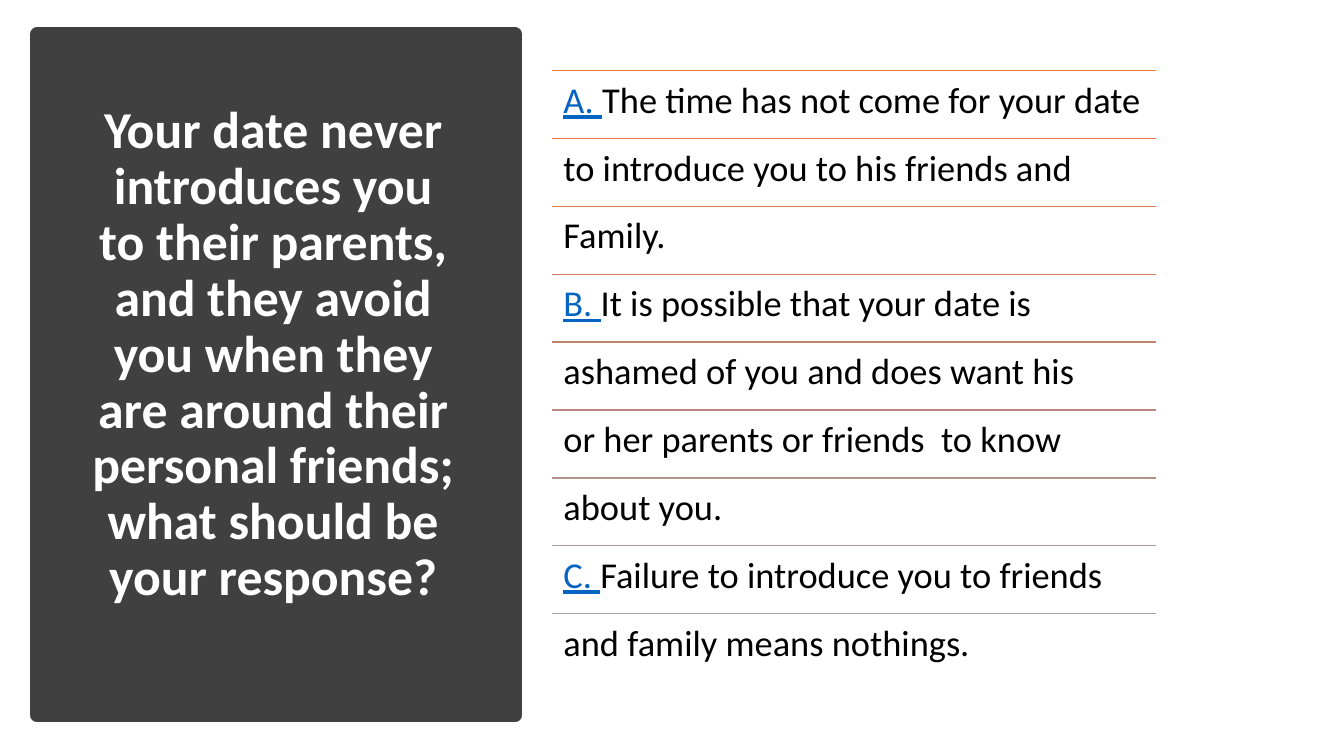
from lxml.etree import SubElement
from pptx import Presentation
from pptx.dml.color import RGBColor
from pptx.enum.shapes import MSO_CONNECTOR as Connector, MSO_SHAPE as Shape
from pptx.enum.text import MSO_ANCHOR as Anchor, PP_ALIGN as Align
from pptx.oxml.ns import qn
from pptx.util import Cm, Pt

WHITE = RGBColor(0xFF, 0xFF, 0xFF)
BLACK = RGBColor(0x00, 0x00, 0x00)
CHARCOAL = RGBColor(0x40, 0x40, 0x40)
LETTER_BLUE = RGBColor(0x05, 0x63, 0xC1)

QUESTION = (
    "Your date never introduces you to their parents, and they avoid you "
    "when they are around their personal friends; what should be your response?"
)
ANSWER_ROWS = [
    ("A. ", "The time has not come for your date", RGBColor(0xED, 0x7D, 0x31)),
    ("", "to introduce you to his friends and", RGBColor(0xE2, 0x7A, 0x42)),
    ("", "Family.", RGBColor(0xD8, 0x7A, 0x51)),
    ("B. ", "It is possible that your date is", RGBColor(0xCE, 0x7C, 0x61)),
    ("", "ashamed of you and does want his", RGBColor(0xC4, 0x81, 0x70)),
    ("", "or her parents or friends  to know", RGBColor(0xBC, 0x87, 0x7E)),
    ("", "about you.", RGBColor(0xB4, 0x90, 0x8B)),
    ("C. ", "Failure to introduce you to friends", RGBColor(0xAC, 0x9A, 0x99)),
    ("", "and family means nothings.", RGBColor(0xA5, 0xA5, 0xA5)),
]
ANSWERS_LEFT, ANSWERS_TOP = 13.92, 1.78
ANSWERS_WIDTH, ROW_HEIGHT = 15.21, 1.71


class QuizSlide:
    font_name = "Calibri"
    line_spacing = 0.9

    def __init__(self, slide):
        self.shapes = slide.shapes

    def panel(self, left, top, width, height, color):
        panel = self.shapes.add_shape(
            Shape.RECTANGLE, Cm(left), Cm(top), Cm(width), Cm(height)
        )
        panel.shadow.inherit = False
        panel.fill.solid()
        panel.fill.fore_color.rgb = color
        panel.line.color.rgb = color
        panel.line.width = Pt(10)

    def rule(self, left, top, width, color):
        rule = self.shapes.add_connector(
            Connector.STRAIGHT, Cm(left), Cm(top), Cm(left + width), Cm(top)
        )
        rule.line.color.rgb = color
        rule.line.width = Pt(1)
        SubElement(rule.element.spPr, qn("a:effectLst"))

    def text(self, left, top, width, height, parts, size, bold=False,
             align=Align.LEFT, anchor=Anchor.TOP, inset=None):
        box = self.shapes.add_textbox(Cm(left), Cm(top), Cm(width), Cm(height))
        frame = box.text_frame
        frame.word_wrap = True
        frame.vertical_anchor = anchor
        if inset is not None:
            frame.margin_left = frame.margin_right = Cm(inset)
            frame.margin_top = frame.margin_bottom = Cm(inset)
        paragraph = frame.paragraphs[0]
        paragraph.alignment = align
        paragraph.line_spacing = self.line_spacing
        for wording, color, underline in parts:
            run = paragraph.add_run()
            run.text = wording
            run.font.name = self.font_name
            run.font.size = Pt(size)
            run.font.bold = bold
            run.font.underline = underline
            run.font.color.rgb = color

    def answer_row(self, top, letter, wording, rule_color):
        self.rule(ANSWERS_LEFT, top, ANSWERS_WIDTH, rule_color)
        parts = [(letter, LETTER_BLUE, True)] if letter else []
        parts.append((wording, BLACK, False))
        self.text(ANSWERS_LEFT, top, ANSWERS_WIDTH, ROW_HEIGHT, parts,
                  size=26, inset=0.28)


def main():
    presentation = Presentation()
    presentation.slide_width = Cm(33.87)
    presentation.slide_height = Cm(19.05)
    quiz = QuizSlide(presentation.slides.add_slide(presentation.slide_layouts[6]))

    quiz.panel(0.94, 0.86, 12.04, 17.17, CHARCOAL)
    quiz.text(2.06, 2.06, 9.65, 13.79, [(QUESTION, WHITE, False)], size=37,
              bold=True, align=Align.CENTER, anchor=Anchor.MIDDLE)
    for index, (letter, wording, rule_color) in enumerate(ANSWER_ROWS):
        quiz.answer_row(ANSWERS_TOP + index * ROW_HEIGHT, letter, wording, rule_color)

    presentation.save("out.pptx")


if __name__ == "__main__":
    main()
